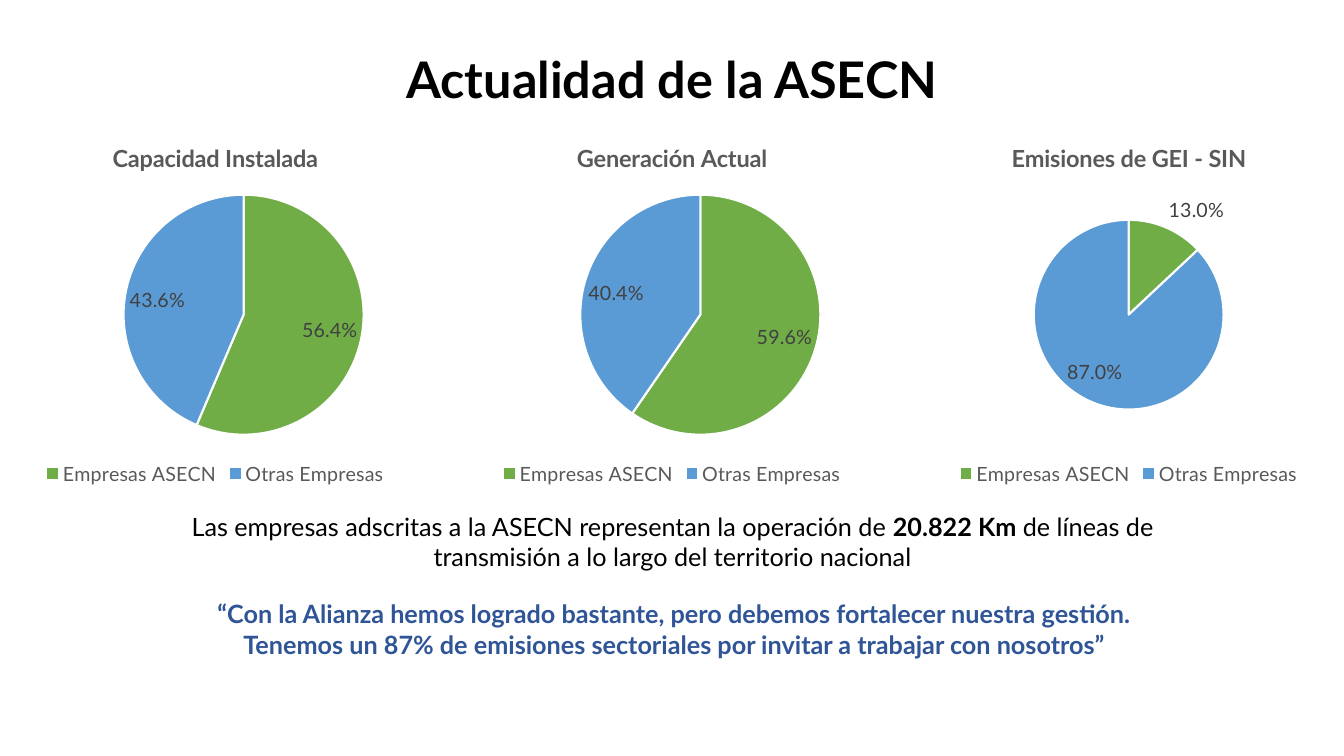
from pptx import Presentation
from pptx.chart.data import CategoryChartData
from pptx.dml.color import RGBColor
from pptx.enum.chart import XL_CHART_TYPE as ChartType
from pptx.enum.chart import XL_LABEL_POSITION as LabelPosition
from pptx.enum.chart import XL_LEGEND_POSITION as LegendPosition
from pptx.enum.text import MSO_ANCHOR as Anchor
from pptx.enum.text import PP_ALIGN as Align
from pptx.oxml import parse_xml
from pptx.oxml.ns import nsdecls, qn
from pptx.util import Inches, Pt

CATEGORY_COLOURS = {"Empresas ASECN": "70AD47", "Otras Empresas": "5B9BD5"}
WIDE_PIE = (0.29, 0.19, 0.55, 0.66)
SMALL_PIE = (0.28, 0.26, 0.44, 0.52)
PIES = [
    ("Capacidad Instalada", (56.4, 43.6), WIDE_PIE),
    ("Generación Actual", (59.6, 40.4), WIDE_PIE),
    ("Emisiones de GEI - SIN", (13, 87), SMALL_PIE),
]
PIE_LEFT, PIE_STEP = -0.03, 4.53


def colour(value):
    return RGBColor.from_string(value)


class SlideBuilder:
    font_name = "Lato"

    def __init__(self, page):
        self.page = page

    def style(self, font, size, fill, bold=False):
        values = {"name": self.font_name, "size": Pt(size), "bold": bold}
        for name, value in values.items():
            setattr(font, name, value)
        font.color.rgb = colour(fill)

    def text(self, place, paragraphs, size, fill="000000",
             anchor=Anchor.TOP, **spacing):
        """Each paragraph is a list of (wording, bold) spans."""
        frame = self.page.shapes.add_textbox(*map(Inches, place)).text_frame
        frame.word_wrap = True
        frame.vertical_anchor = anchor
        for index, spans in enumerate(paragraphs):
            para = frame.add_paragraph() if index else frame.paragraphs[0]
            for name, value in {"alignment": Align.CENTER, **spacing}.items():
                setattr(para, name, value)
            for wording, bold in spans:
                span = para.add_run()
                span.text = wording
                self.style(span.font, size, fill, bold)

    def pie(self, place, title, values, plot_box):
        data = CategoryChartData()
        data.categories = list(CATEGORY_COLOURS)
        data.add_series(title, values)
        chart = self.page.shapes.add_chart(
            ChartType.PIE, *map(Inches, place), data).chart
        self.style(chart.font, 14, "000000")

        chart.has_title = True
        chart.chart_title.include_in_layout = False
        span = chart.chart_title.text_frame.paragraphs[0].add_run()
        span.text = title
        self.style(span.font, 16.8, "595959", True)

        chart.has_legend = True
        chart.legend.position = LegendPosition.BOTTOM
        chart.legend.include_in_layout = False
        self.style(chart.legend.font, 14, "595959")

        chart.plots[0].vary_by_categories = True
        series = chart.plots[0].series[0]
        for index, fill in enumerate(CATEGORY_COLOURS.values()):
            shape_format = series.points[index].format
            shape_format.fill.solid()
            shape_format.fill.fore_color.rgb = colour(fill)
            shape_format.line.color.rgb = colour("FFFFFF")
            shape_format.line.width = Pt(1.5)

        labels = series.data_labels
        label_values = {
            "show_percentage": True, "show_value": False,
            "number_format": "0.0%", "number_format_is_linked": False,
            "position": LabelPosition.BEST_FIT,
        }
        for name, value in label_values.items():
            setattr(labels, name, value)
        self.style(labels.font, 14, "404040")
        self.place_plot(chart, plot_box)

    def place_plot(self, chart, plot_box):
        """Set the pie's left, top, width and height as shares of the chart."""
        area = chart.plots[0]._element.getparent()
        for old in area.findall(qn("c:layout")):
            area.remove(old)
        sizes = "".join(f'<c:{name} val="{share}"/>'
                        for name, share in zip("xywh", plot_box))
        area.insert(0, parse_xml(
            f'<c:layout {nsdecls("c")}><c:manualLayout>'
            '<c:layoutTarget val="inner"/>'
            '<c:xMode val="edge"/><c:yMode val="edge"/>'
            f'{sizes}</c:manualLayout></c:layout>'))


def main():
    deck = Presentation()
    deck.slide_width, deck.slide_height = Inches(13.33), Inches(7.5)
    builder = SlideBuilder(deck.slides.add_slide(deck.slide_layouts[6]))

    builder.text((1.02, 0.38, 11.29, 0.88),
                 [[("Actualidad de la ASECN", True)]],
                 36, anchor=Anchor.MIDDLE, line_spacing=0.9)
    for index, (title, values, plot_box) in enumerate(PIES):
        left = PIE_LEFT + index * PIE_STEP
        builder.pie((left, 1.24, 4.33, 3.62), title, values, plot_box)
    builder.text((1.66, 5.02, 10.02, 0.71), [[
        ("Las empresas adscritas a la ASECN representan la operación de ", False),
        ("20.822 Km", True),
        (" de líneas de transmisión a lo largo del territorio nacional", False),
    ]], 18, space_after=Pt(6))
    builder.text((0.02, 5.89, 13.33, 0.71), [
        [("“Con la Alianza hemos logrado bastante, pero debemos fortalecer "
          "nuestra gestión.", True)],
        [("Tenemos un 87% de emisiones sectoriales por invitar a trabajar "
          "con nosotros”", True)],
    ], 18, "2F5597")
    deck.save("out.pptx")


if __name__ == "__main__":
    main()
